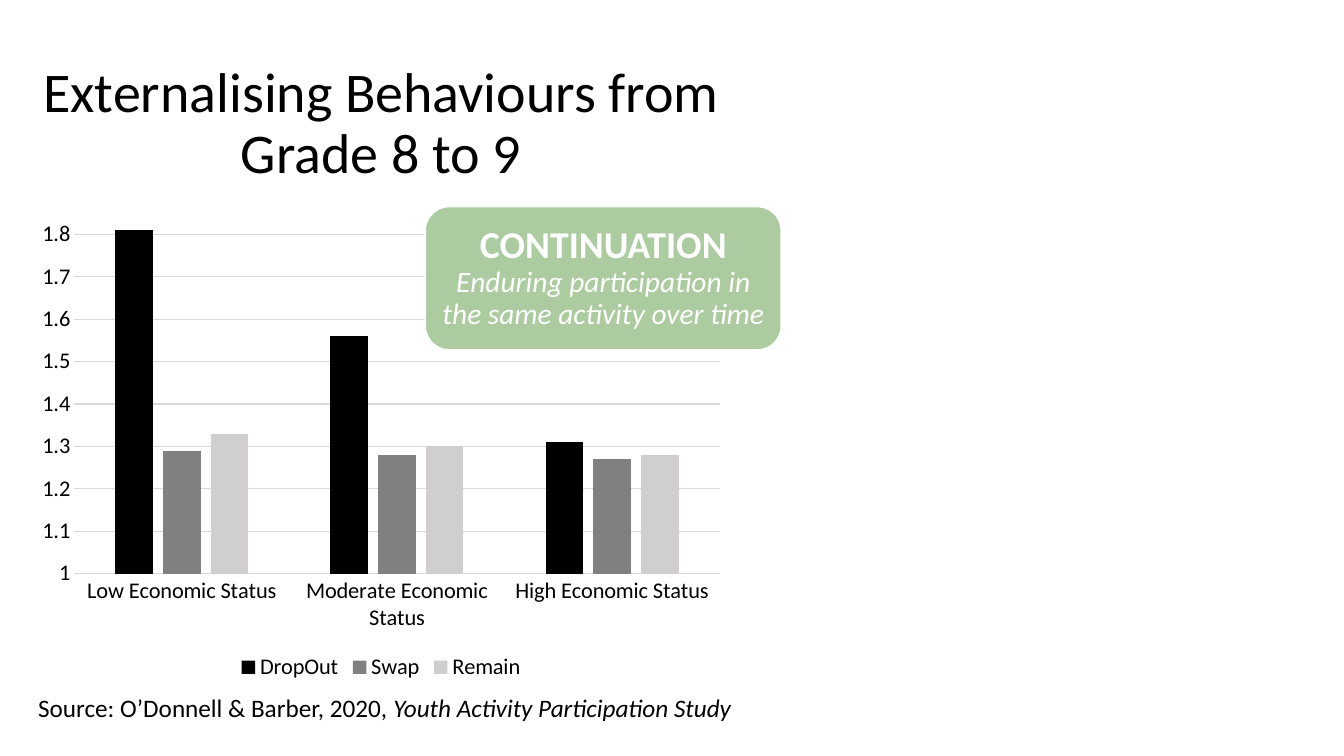
from pptx import Presentation
from pptx.chart.data import CategoryChartData
from pptx.dml.color import RGBColor
from pptx.enum.chart import XL_CHART_TYPE as ChartType, XL_LEGEND_POSITION as LegendPos
from pptx.enum.chart import XL_TICK_MARK as Tick
from pptx.enum.shapes import MSO_SHAPE as Preset
from pptx.enum.text import MSO_ANCHOR as Anchor, MSO_AUTO_SIZE as AutoSize, PP_ALIGN as Align
from pptx.util import Pt

BLACK = RGBColor(0x00, 0x00, 0x00)
GREY = RGBColor(0x80, 0x80, 0x80)
PALE = RGBColor(0xD0, 0xCE, 0xCE)
GRID = RGBColor(0xD9, 0xD9, 0xD9)
GREEN = RGBColor(0xAD, 0xCB, 0xA0)
WHITE = RGBColor(0xFF, 0xFF, 0xFF)

LEFT = 20.16
CONTENT_WIDTH = 504

STATUSES = ["Low Economic Status", "Moderate Economic Status", "High Economic Status"]
BEHAVIOURS = [
    ("DropOut", [1.81, 1.56, 1.31], BLACK),
    ("Swap", [1.29, 1.28, 1.27], GREY),
    ("Remain", [1.33, 1.3, 1.28], PALE),
]


def points(box):
    return [Pt(length) for length in box]


class SlideBuilder:
    font = "Calibri"

    def __init__(self, slide):
        self.shapes = slide.shapes

    def style_font(self, font, size, color=BLACK, bold=False, italic=False):
        font.name, font.size = self.font, Pt(size)
        font.bold, font.italic = bold, italic
        font.color.rgb = color

    def text(self, box, *lines, anchor=Anchor.TOP, align=Align.LEFT, spacing=1.0,
             inset=None, grow=False):
        """Write lines in one paragraph; each line is a list of (wording, font format)."""
        frame = self.shapes.add_textbox(*points(box)).text_frame
        frame.word_wrap = True
        frame.auto_size = AutoSize.SHAPE_TO_FIT_TEXT if grow else AutoSize.NONE
        frame.vertical_anchor = anchor
        if inset is not None:
            frame.margin_left = frame.margin_right = Pt(inset)
            frame.margin_top = frame.margin_bottom = Pt(inset)
        paragraph = frame.paragraphs[0]
        paragraph.alignment, paragraph.line_spacing = align, spacing
        for number, line in enumerate(lines):
            if number:
                paragraph.add_line_break()
            for wording, style in line:
                run = paragraph.add_run()
                run.text = wording
                self.style_font(run.font, **style)

    def panel(self, box, fill, outline):
        panel = self.shapes.add_shape(Preset.ROUNDED_RECTANGLE, *points(box))
        panel.shadow.inherit = False
        panel.fill.solid()
        panel.fill.fore_color.rgb = fill
        panel.line.color.rgb = outline
        panel.line.width = Pt(1)

    def column_chart(self, box, categories, series, low, high, step, size):
        data = CategoryChartData(number_format="General")
        data.categories = categories
        for name, values, _ in series:
            data.add_series(name, values)
        chart = self.shapes.add_chart(ChartType.COLUMN_CLUSTERED, *points(box), data).chart
        chart.has_title = False
        self.style_font(chart.font, size)

        plot = chart.plots[0]
        plot.gap_width, plot.overlap, plot.vary_by_categories = 219, -27, False
        for columns, (_, _, color) in zip(plot.series, series):
            columns.format.fill.solid()
            columns.format.fill.fore_color.rgb = color
            columns.invert_if_negative = False

        chart.has_legend = True
        chart.legend.position = LegendPos.BOTTOM
        chart.legend.include_in_layout = False
        self.style_font(chart.legend.font, size)

        statuses, scale = chart.category_axis, chart.value_axis
        for axis in (statuses, scale):
            axis.major_tick_mark = axis.minor_tick_mark = Tick.NONE
            self.style_font(axis.tick_labels.font, size)
        scale.minimum_scale, scale.maximum_scale, scale.major_unit = low, high, step
        scale.has_major_gridlines = True
        scale.format.line.fill.background()
        for line in (statuses.format.line, scale.major_gridlines.format.line):
            line.color.rgb = GRID
            line.width = Pt(0.75)


def main():
    deck = Presentation()
    deck.slide_width, deck.slide_height = Pt(960), Pt(540)
    page = SlideBuilder(deck.slides.add_slide(deck.slide_layouts[6]))

    page.text((LEFT, 33.84, CONTENT_WIDTH, 102.24),
              [("Externalising Behaviours from Grade 8 to 9", dict(size=40))],
              anchor=Anchor.BOTTOM, align=Align.CENTER, spacing=0.9)
    page.column_chart((LEFT, 145.44, CONTENT_WIDTH, 344.16), STATUSES, BEHAVIOURS,
                      low=1, high=1.85, step=0.1, size=16)
    page.text((LEFT, 491.04, 534.96, 29.52),
              [("Source: O’Donnell & Barber, 2020, ", dict(size=18)),
               ("Youth Activity Participation Study", dict(size=18, italic=True))],
              grow=True)
    page.panel((303.84, 147.6, 254.16, 102.24), GREEN, WHITE)
    page.text((306.72, 152.64, 248.4, 92.16),
              [("CONTINUATION", dict(size=27, color=WHITE, bold=True))],
              [("Enduring participation in the same activity over time",
                dict(size=21, color=WHITE, italic=True))],
              anchor=Anchor.MIDDLE, align=Align.CENTER, spacing=0.9, inset=8)
    deck.save("out.pptx")


if __name__ == "__main__":
    main()
